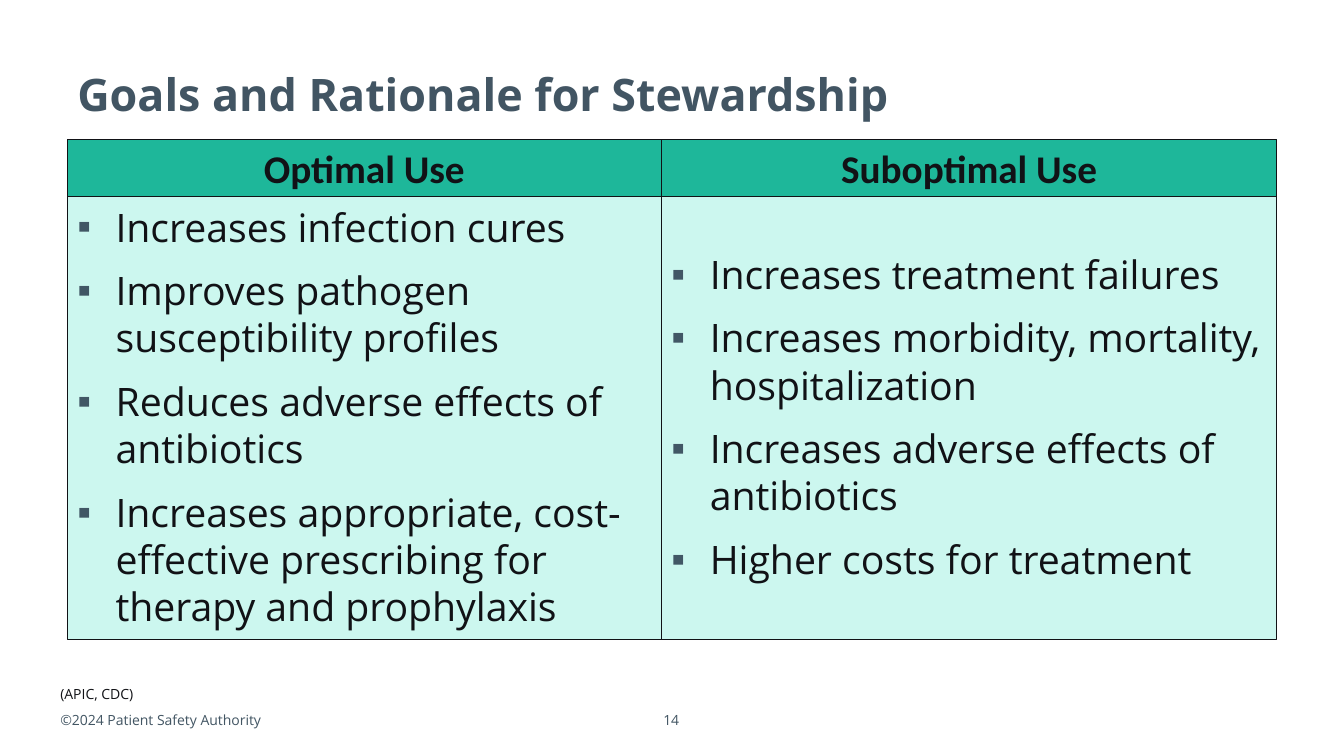
import pptx
import pptx.util
import pptx.dml.color
import pptx.enum.shapes
import pptx.enum.text
import lxml.etree

Inch, Pt = pptx.util.Inches, pptx.util.Pt
Align, Mode = pptx.enum.text.PP_ALIGN, pptx.enum.text.MSO_AUTO_SIZE
Anchor = pptx.enum.text.MSO_ANCHOR

theme = {
    "slate": "425563", "mark": "415765", "ink": "111216",
    "head": "1EB79A", "body": "CCF7EF",
    "font": "Open Sans", "bold": "Calibri",
    "title": 32, "text": 28, "note": 10,
}
wide, high = 13.33, 7.5
left = wide / 20
edges = [left, 6.56, wide - left]
top, head_high, list_top, list_high = 1.38, 0.57, 1.92, 4.42

columns = [
    ("Optimal Use", [
        "Increases infection cures",
        "Improves pathogen susceptibility profiles",
        "Reduces adverse effects of antibiotics",
        "Increases appropriate, cost-effective prescribing for therapy and prophylaxis",
    ]),
    ("Suboptimal Use", [
        "Increases treatment failures",
        "Increases morbidity, mortality, hospitalization",
        "Increases adverse effects of antibiotics",
        "Higher costs for treatment",
    ]),
]
notes = [
    ("©2024 Patient Safety Authority", 0.5, 7, 2.41, "slate"),
    ("14", 6.48, 7, 0.39, "slate"),
    ("(APIC, CDC)", 0.5, 6.75, 1.83, "ink"),
]


def place(shape, x, y, w, h, fill=None):
    """Set the frame of a shape and, given a fill, its colours."""
    shape.left, shape.top, shape.width, shape.height = map(Inch, (x, y, w, h))
    shape.text_frame.word_wrap = True
    shape.text_frame.auto_size = Mode.NONE
    if fill:
        shape.fill.solid()
        shape.fill.fore_color.rgb = pptx.dml.color.RGBColor.from_string(theme[fill])
        shape.line.color.rgb = pptx.dml.color.RGBColor.from_string(theme["ink"])
        shape.line.width = Pt(0.75)


def style(para, size, color, font="font", bold=False):
    for run in para.runs:
        run.font.name = theme[font]
        run.font.size = Pt(theme[size])
        run.font.bold = bold
        run.font.color.rgb = pptx.dml.color.RGBColor.from_string(theme[color])


deck = pptx.Presentation()
deck.slide_width, deck.slide_height = Inch(wide), Inch(high)
slide = deck.slides.add_slide(deck.slide_layouts.get_by_name("Two Content"))

# Title
title = slide.shapes.title
place(title, left, 0.3, wide - 2 * left, 1.25)
title.text_frame.text = "Goals and Rationale for Stewardship"
title.text_frame.vertical_anchor = Anchor.MIDDLE
title.text_frame.paragraphs[0].alignment = Align.LEFT
style(title.text_frame.paragraphs[0], "title", "slate", bold=True)

# Two columns: a list under a heading
for col, (name, goals) in enumerate(columns):
    x, w = edges[col], edges[col + 1] - edges[col]
    box = slide.placeholders[col + 1]
    place(box, x, list_top, w, list_high, "body")
    frame = box.text_frame
    frame.text = "\n".join(goals)
    frame.vertical_anchor = Anchor.MIDDLE
    for row, para in enumerate(frame.paragraphs):
        props = para._p.get_or_add_pPr()
        props.set("marL", str(Inch(0.38)))
        props.set("indent", str(-Inch(0.38)))
        tint = lxml.etree.SubElement(props, pptx.oxml.ns.qn("a:buClr"))
        lxml.etree.SubElement(tint, pptx.oxml.ns.qn("a:srgbClr"), val=theme["mark"])
        lxml.etree.SubElement(props, pptx.oxml.ns.qn("a:buChar"), char="▪")
        para.space_before = Pt(12 if row else 0)
        style(para, "text", "ink")

    head = slide.shapes.add_shape(
        pptx.enum.shapes.MSO_SHAPE.RECTANGLE, 0, 0, 0, 0)
    head.shadow.inherit = False
    place(head, x, top, w, head_high, "head")
    head.text_frame.text = name
    head.text_frame.vertical_anchor = Anchor.TOP
    head.text_frame.paragraphs[0].alignment = Align.CENTER
    style(head.text_frame.paragraphs[0], "text", "ink", "bold", True)

# Source and footer
for text, x, y, w, color in notes:
    note = slide.shapes.add_textbox(0, 0, 0, 0)
    place(note, x, y, w, 0.27)
    note.text_frame.text = text
    note.text_frame.vertical_anchor = Anchor.BOTTOM
    style(note.text_frame.paragraphs[0], "note", color)

deck.save("out.pptx")
